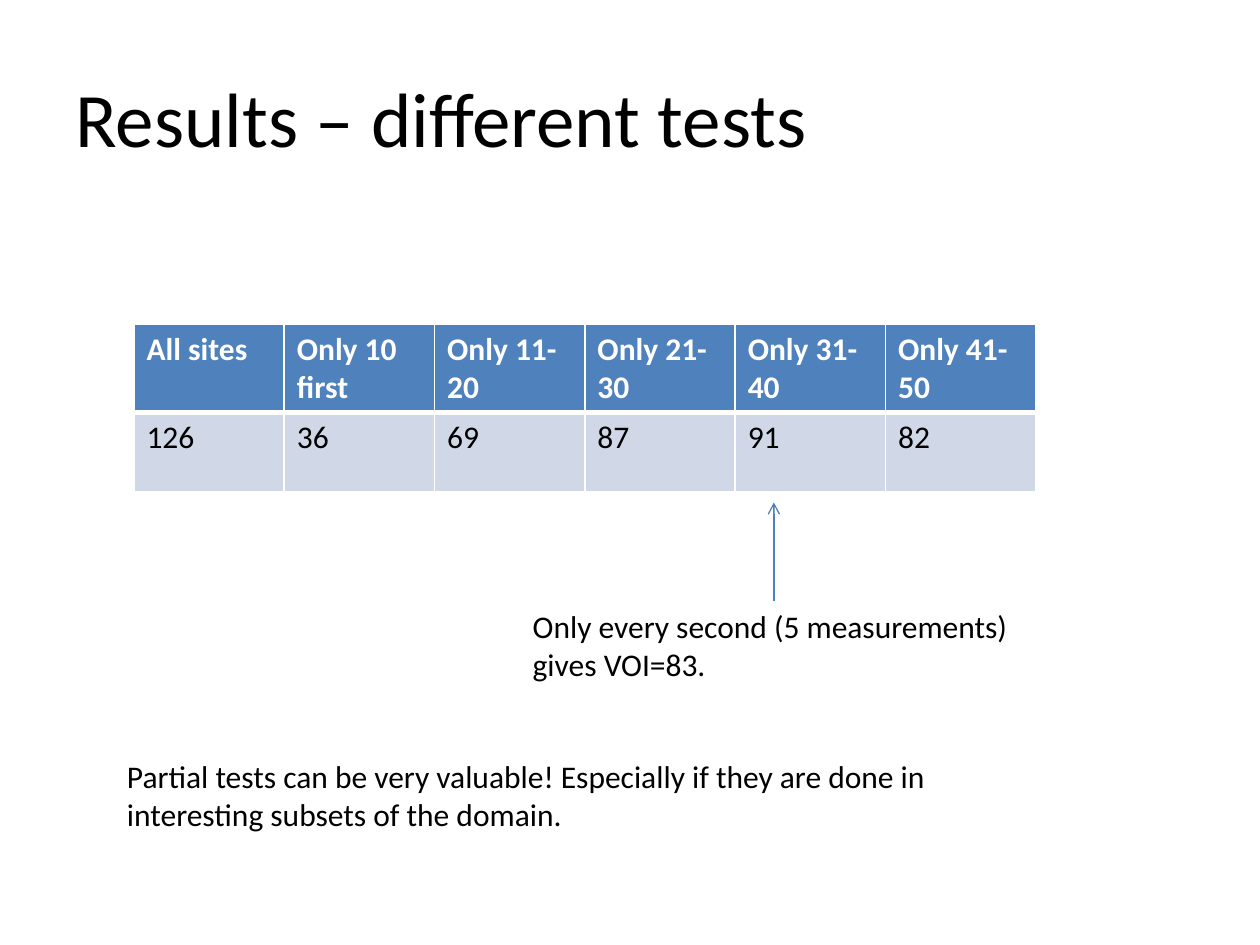
import pptx
import pptx.dml.color
import pptx.enum.shapes
import pptx.enum.text
import pptx.oxml.ns
import pptx.util
from lxml import etree
from pptx.util import Cm

BLACK = pptx.dml.color.RGBColor(0x00, 0x00, 0x00)
WHITE = pptx.dml.color.RGBColor(0xFF, 0xFF, 0xFF)
HEADER_BLUE = pptx.dml.color.RGBColor(0x4F, 0x81, 0xBD)
BODY_BLUE = pptx.dml.color.RGBColor(0xD0, 0xD8, 0xE8)
ARROW_BLUE = pptx.dml.color.RGBColor(0x4B, 0x7E, 0xBC)

FONT = "Calibri"
RESULTS = {
    "All sites": 126,
    "Only 10 first": 36,
    "Only 11-20": 69,
    "Only 21-30": 87,
    "Only 31-40": 91,
    "Only 41-50": 82,
}


def add_element(parent, tag, **attributes):
    return etree.SubElement(parent, pptx.oxml.ns.qn(tag), attributes)


def format_text(text_frame, size, color, bold=False):
    for paragraph in text_frame.paragraphs:
        for run in paragraph.runs:
            run.font.name = FONT
            run.font.size = pptx.util.Pt(size)
            run.font.bold = bold
            run.font.color.rgb = color


def add_text(slide, text, left, top, width, height, size=18,
             anchor=pptx.enum.text.MSO_ANCHOR.TOP):
    shape = slide.shapes.add_textbox(left, top, width, height)
    text_frame = shape.text_frame
    text_frame.word_wrap = True
    text_frame.vertical_anchor = anchor
    text_frame.text = text
    format_text(text_frame, size, BLACK)


def set_borders(cell, widths):
    """Draw white cell borders; widths maps each side (L, R, T, B) to points."""
    properties = cell._tc.get_or_add_tcPr()
    for side, width in widths.items():
        line = add_element(properties, f"a:ln{side}", w=str(pptx.util.Pt(width)))
        fill = add_element(line, "a:solidFill")
        add_element(fill, "a:srgbClr", val=str(WHITE))


def fill_cell(cell, text, is_header):
    cell.text = text
    format_text(cell.text_frame, 18, WHITE if is_header else BLACK, is_header)
    rule = 3
    set_borders(cell, {"L": 1, "R": 1,
                       "T": 1 if is_header else rule,
                       "B": rule if is_header else 1})
    cell.fill.solid()
    cell.fill.fore_color.rgb = HEADER_BLUE if is_header else BODY_BLUE


def add_results_table(slide, left, top, column_width, header_height, body_height):
    frame = slide.shapes.add_table(
        2, len(RESULTS), left, top,
        column_width * len(RESULTS), header_height + body_height)
    table = frame.table
    table.rows[0].height = header_height
    table.rows[1].height = body_height
    for index, (test, value) in enumerate(RESULTS.items()):
        table.columns[index].width = column_width
        fill_cell(table.cell(0, index), test, True)
        fill_cell(table.cell(1, index), str(value), False)


def add_arrow(slide, start_x, start_y, end_x, end_y):
    arrow = slide.shapes.add_connector(
        pptx.enum.shapes.MSO_CONNECTOR.STRAIGHT, start_x, start_y, end_x, end_y)
    arrow.line.color.rgb = ARROW_BLUE
    arrow.line.width = pptx.util.Pt(0.75)
    add_element(arrow.line._get_or_add_ln(), "a:tailEnd", type="arrow")
    add_element(arrow._element.spPr, "a:effectLst")


def main():
    presentation = pptx.Presentation()
    presentation.slide_width = Cm(25.4)
    presentation.slide_height = Cm(19.05)
    slide = presentation.slides.add_slide(presentation.slide_layouts[6])

    add_text(slide, "Results – different tests",
             Cm(1.27), Cm(0.76), Cm(23.83), Cm(3.18), size=44,
             anchor=pptx.enum.text.MSO_ANCHOR.MIDDLE)
    add_results_table(slide, Cm(2.7), Cm(6.53), Cm(3.03), Cm(1.78), Cm(1.6))
    add_text(slide, "Partial tests can be very valuable! Especially if they "
             "are done in interesting subsets of the domain.",
             Cm(2.31), Cm(15.14), Cm(19.41), Cm(1.8))
    add_arrow(slide, Cm(15.6), Cm(12.12), Cm(15.6), Cm(10.13))
    add_text(slide, "Only every second (5 measurements) gives VOI=83.",
             Cm(10.49), Cm(12.12), Cm(10.21), Cm(1.8))

    presentation.save("out.pptx")


if __name__ == "__main__":
    main()
